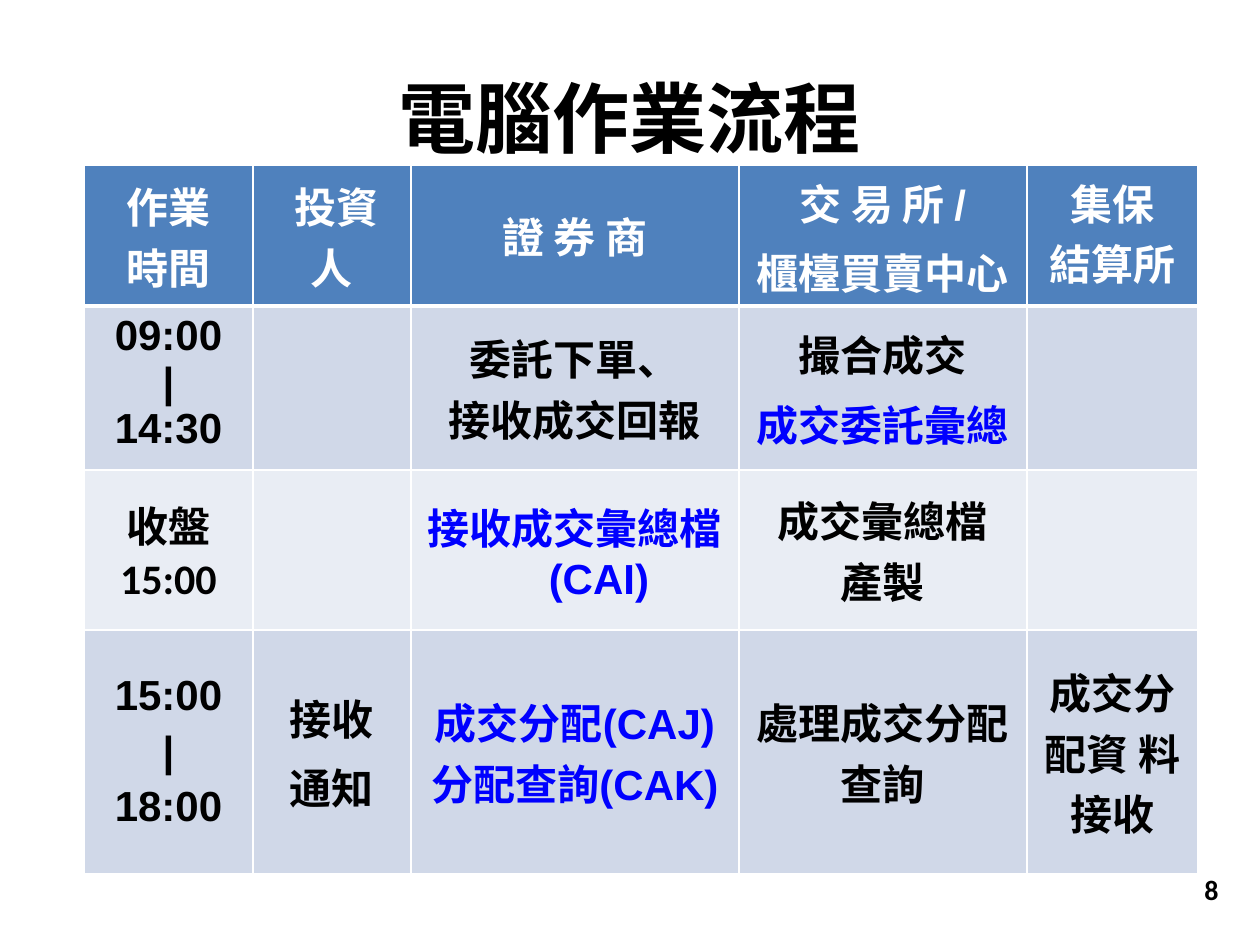
import pptx
import pptx.util
import pptx.dml.color
import pptx.enum.text
import pptx.oxml
import pptx.oxml.ns

PX = 914400 / 126
BLACK, WHITE, BLUE = "000000", "FFFFFF", "0000FF"
FILLS = ["4F81BD", "D0D8E8", "E9EDF4", "D0D8E8"]
COLS = [169, 158, 328, 288, 171]
ROWS = [141, 160, 160, 244]
ROWTEXT = [
    ["作業\n時間", " 投資人", "證 券 商", "交 易 所 /\n櫃檯買賣中心", "集保\n結算所"],
    ["09:00\n|\n14:30", "", "委託下單、\n接收成交回報", "撮合成交\n成交委託彙總", ""],
    ["收盤\n15:00", "", "接收成交彙總檔(CAI)", "成交彙總檔\n產製", ""],
    ["15:00\n|\n18:00", "接收\n通知", "成交分配(CAJ)\n分配查詢(CAK)",
     "處理成交分配查詢", "成交分配資 料接收"],
]
TOP = {(0, 3), (0, 4), (1, 0)}
SPACED = {(0, 3), (1, 3), (3, 0), (3, 1)}
HANGING = {(0, 2), (1, 2), (2, 2), (2, 3), (3, 2)}
BLUES = {"成交委託彙總", "接收成交彙總檔(CAI)", "成交分配(CAJ)", "分配查詢(CAK)"}
CALIBRI = {(1, 2, 0), (1, 2, 1), (2, 0, 1)}
ALIGN = pptx.enum.text.PP_ALIGN
ANCHOR = pptx.enum.text.MSO_ANCHOR


def px(n):
    return round(n * PX)


def rgb(code):
    return pptx.dml.color.RGBColor.from_string(code)


def style(para, size, face, color, align=ALIGN.CENTER):
    para.alignment = align
    for run in para.runs:
        font = run.font
        font.size = pptx.util.Pt(size)
        font.name = face
        font.bold = True
        font.color.rgb = rgb(color)


def label(slide, text, box, size, align):
    shape = slide.shapes.add_textbox(*map(px, box))
    frame = shape.text_frame
    frame.word_wrap = True
    frame.vertical_anchor = ANCHOR.MIDDLE
    frame.text = text
    style(frame.paragraphs[0], size, "Calibri", BLACK, align)


def border(cell, row):
    wide = {"lnT": 3 if row == 1 else 1, "lnB": 3 if row == 0 else 1}
    props = cell._tc.get_or_add_tcPr()
    for spot, side in enumerate(["lnL", "lnR", "lnT", "lnB"]):
        line = pptx.oxml.parse_xml(
            f'<a:{side} {pptx.oxml.ns.nsdecls("a")} w="{wide.get(side, 1) * 12700}">'
            f'<a:solidFill><a:srgbClr val="{WHITE}"/></a:solidFill></a:{side}>')
        props.insert(spot, line)


def fill(cell, row, col, text):
    cell.fill.solid()
    cell.fill.fore_color.rgb = rgb(FILLS[row])
    border(cell, row)
    cell.vertical_anchor = ANCHOR.TOP if (row, col) in TOP else ANCHOR.MIDDLE
    cell.text_frame.text = text
    for i, para in enumerate(cell.text_frame.paragraphs):
        color = WHITE if row == 0 else BLUE if para.text in BLUES else BLACK
        face = "Calibri" if (row, col, i) in CALIBRI else "Arial"
        style(para, 24, face, color)
        if i and (row, col) in SPACED:
            para.space_before = pptx.util.Pt(5)
        if (row, col) in HANGING:
            props = para._p.get_or_add_pPr()
            props.set("marL", str(px(48)))
            props.set("indent", str(-px(48)))


def main():
    deck = pptx.Presentation()
    deck.slide_width, deck.slide_height = px(1260), px(945)
    slide = deck.slides.add_slide(deck.slide_layouts[6])
    label(slide, "電腦作業流程", (63, 38, 1134, 157), 44, ALIGN.CENTER)
    label(slide, "8", (1145, 870, 86, 39), 16, ALIGN.RIGHT)
    grid = slide.shapes.add_table(
        len(ROWS), len(COLS), px(84), px(165), px(sum(COLS)), px(sum(ROWS))).table
    for col, width in zip(grid.columns, COLS):
        col.width = px(width)
    for row, height in zip(grid.rows, ROWS):
        row.height = px(height)
    for r, texts in enumerate(ROWTEXT):
        for c, text in enumerate(texts):
            fill(grid.cell(r, c), r, c, text)
    deck.save("out.pptx")


if __name__ == "__main__":
    main()
